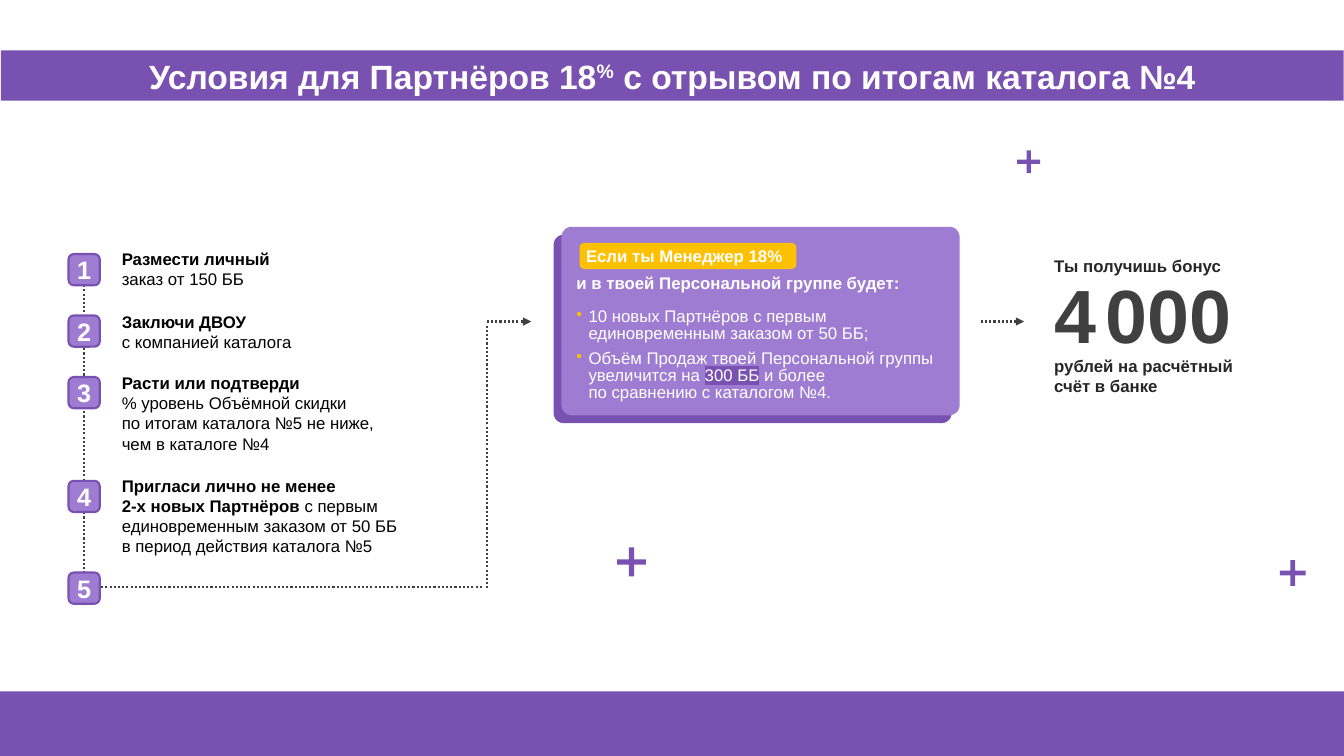
"""Build the slide with the bonus terms for partners."""
from lxml.etree import SubElement
from pptx import Presentation
from pptx.dml.color import RGBColor
from pptx.enum.dml import MSO_LINE
from pptx.enum.shapes import MSO_CONNECTOR, MSO_SHAPE
from pptx.enum.text import MSO_ANCHOR, PP_ALIGN
from pptx.oxml import parse_xml
from pptx.oxml.ns import nsdecls, qn
from pptx.util import Inches, Pt

VIOLET, LILAC, AMBER = "7951B1", "9E7CD2", "FFC000"
WHITE, BLACK, INK, GREY = "FFFFFF", "000000", "262626", "404040"
CELL = Inches(0.1)
COLS, ROWS = 133.33, 75
hue = RGBColor.from_string

deck = Presentation()
deck.slide_width, deck.slide_height = round(COLS * CELL), ROWS * CELL
slide = deck.slides.add_slide(deck.slide_layouts[6])
pool = slide.shapes


def draw(kind, box, fill, bend=None):
    """Add a plain filled shape, placed in grid cells."""
    item = pool.add_shape(kind, *[round(v * CELL) for v in box])
    item.shadow.inherit = False
    item.fill.solid()
    item.fill.fore_color.rgb = hue(fill)
    item.line.fill.background()
    if bend is not None:
        item.adjustments[0] = bend
    return item


def write(frame, paras, size, tint, **style):
    """Fill a frame with paragraphs of (text, format) runs."""
    frame.word_wrap = True
    for n, runs in enumerate(paras):
        para = frame.paragraphs[0] if n == 0 else frame.add_paragraph()
        for text, extra in runs:
            form = {"name": "Arial", "size": Pt(size), **style, **extra}
            for m, line in enumerate(text.split("\n")):
                if m:
                    para.add_line_break()
                    SubElement(para._p[-1], qn("a:rPr"), sz=str(int(size * 100)))
                if line:
                    run = para.add_run()
                    run.text = line
                    run.font.color.rgb = hue(tint)
                    for key, value in form.items():
                        setattr(run.font, key, value)
    return frame


draw(MSO_SHAPE.RECTANGLE, (0, 68.6, COLS, 6.4), VIOLET)
for left, top, side in ((60.7, 53.8, 3.9), (100.5, 14.5, 3.1), (126.5, 55.1, 3.5)):
    draw(MSO_SHAPE.MATH_PLUS, (left, top, side, side), VIOLET, 0.134)

title = draw(MSO_SHAPE.RECTANGLE, (0.1, 5, 133.2, 5), VIOLET)
runs = [("Условия для Партнёров 18", {}), ("%", {}), (" с отрывом по итогам каталога №4", {})]
head = write(title.text_frame, [runs], 24, WHITE, bold=True)
head.paragraphs[0].alignment = PP_ALIGN.CENTER
head.paragraphs[0].runs[1]._r.rPr.set("baseline", "30000")

card = draw(MSO_SHAPE.ROUNDED_RECTANGLE, (55.7, 22.5, 39.5, 18.7), LILAC, 0.054)
glow = SubElement(card._element.spPr.find(qn("a:effectLst")), qn("a:outerShdw"),
                  blurRad="0", dist=str(Pt(8)), dir=str(135 * 60000), algn="tr", rotWithShape="0")
SubElement(glow, qn("a:srgbClr"), val=VIOLET)

tag = draw(MSO_SHAPE.ROUNDED_RECTANGLE, (57.5, 24.1, 21.5, 2.6), AMBER, 0.181)
label = write(tag.text_frame, [[("Если ты Менеджер 18%", {})]], 12, WHITE, bold=True)
label.paragraphs[0].alignment = PP_ALIGN.LEFT
label.margin_left = round(CELL / 2)
label.margin_top = label.margin_bottom = 0

LIGHT = {"bold": False}
notes = (
    ((56.2, 26.6, 35.1, 3), 12, WHITE, [("и в твоей Персональной группе будет:", {})]),
    ((103.6, 24.9, 21.6, 3), 12, INK, [("Ты получишь бонус", {})]),
    ((103.6, 26.1, 21.6, 10.1), 53.9, GREY, [("4", {}), (" ", {"size": Pt(24)}), ("000", {})]),
    ((103.6, 34.8, 21.6, 5), 12, INK, [("рублей на расчётный\nсчёт в банке", {})]),
    ((11.1, 24.2, 36.6, 5), 12, BLACK, [("Размести личный\n", {}), ("заказ от 150 ББ", LIGHT)]),
    ((11.1, 30.4, 36.6, 5), 12, BLACK, [("Заключи ДВОУ\n", {}), ("с компанией каталога", LIGHT)]),
    ((11.1, 36.5, 28.4, 9.1), 12, BLACK, [
        ("Расти или подтверди\n", {}),
        ("% уровень Объёмной скидки\nпо итогам каталога №5 не ниже,\nчем в каталоге №4", LIGHT)]),
    ((11.1, 46.7, 31.9, 9.1), 12, BLACK, [
        ("Пригласи лично не менее\n2-х новых Партнёров ", {}),
        ("с первым единовременным заказом от 50 ББ\nв период действия каталога №5", LIGHT)]),
)
for box, size, tint, runs in notes:
    area = pool.add_textbox(*[round(v * CELL) for v in box])
    write(area.text_frame, [runs], size, tint, bold=True)

goals = [
    [("10 новых Партнёров с первым единовременным заказом от 50 ББ;", {})],
    [("Объём Продаж твоей Персональной группы увеличится на ", {}), ("300 ББ", {}),
     (" и более\nпо сравнению с каталогом №4.", {})],
]
area = pool.add_textbox(*[round(v * CELL) for v in (56.2, 30.2, 38.7, 10.3)])
list_ = write(area.text_frame, goals, 12, WHITE)
for n, para in enumerate(list_.paragraphs):
    props = para._p.get_or_add_pPr()
    props.set("marL", str(round(1.2 * CELL)))
    props.set("indent", str(round(-1.2 * CELL)))
    SubElement(SubElement(props, qn("a:buClr")), qn("a:srgbClr"), val=AMBER)
    SubElement(props, qn("a:buChar"), char="•")
    para.line_spacing = Pt(12)
    if n:
        para.space_before = Pt(6)
mark = parse_xml(f'<a:highlight {nsdecls("a")}><a:srgbClr val="{VIOLET}"/></a:highlight>')
list_.paragraphs[1].runs[1]._r.rPr.find(qn("a:solidFill")).addnext(mark)

paths = (
    (97.3, 31.9, 101.6, 31.9, True),
    (48.3, 32.3, 48.3, 58.3, False),
    (48.3, 31.9, 52.7, 31.9, True),
    (47.8, 58.2, 8.9, 58.2, False),
    (8.3, 26.2, 8.3, 60, False),
)
for *ends, arrow in paths:
    link = pool.add_connector(MSO_CONNECTOR.STRAIGHT, *[round(v * CELL) for v in ends])
    link.line.color.rgb = hue(GREY)
    for key, value in {"width": Pt(1.5), "dash_style": MSO_LINE.ROUND_DOT}.items():
        setattr(link.line, key, value)
    if arrow:
        SubElement(link.line._get_or_add_ln(), qn("a:tailEnd"), type="triangle")
    SubElement(link._element.spPr, qn("a:effectLst"))

for step, top in enumerate((25.2, 31.3, 37.4, 47.7, 56.8), 1):
    badge = draw(MSO_SHAPE.ROUNDED_RECTANGLE, (6.8, top, 3.1, 3.1), LILAC)
    badge.line.color.rgb = hue(VIOLET)
    badge.line.width = Pt(1.5)
    frame = write(badge.text_frame, [[(str(step), {})]], 18, WHITE, bold=True)
    frame.paragraphs[0].alignment = PP_ALIGN.CENTER
    frame.vertical_anchor = MSO_ANCHOR.MIDDLE
    for edge in ("left", "right", "top", "bottom"):
        setattr(frame, f"margin_{edge}", 0)

deck.save("out.pptx")
